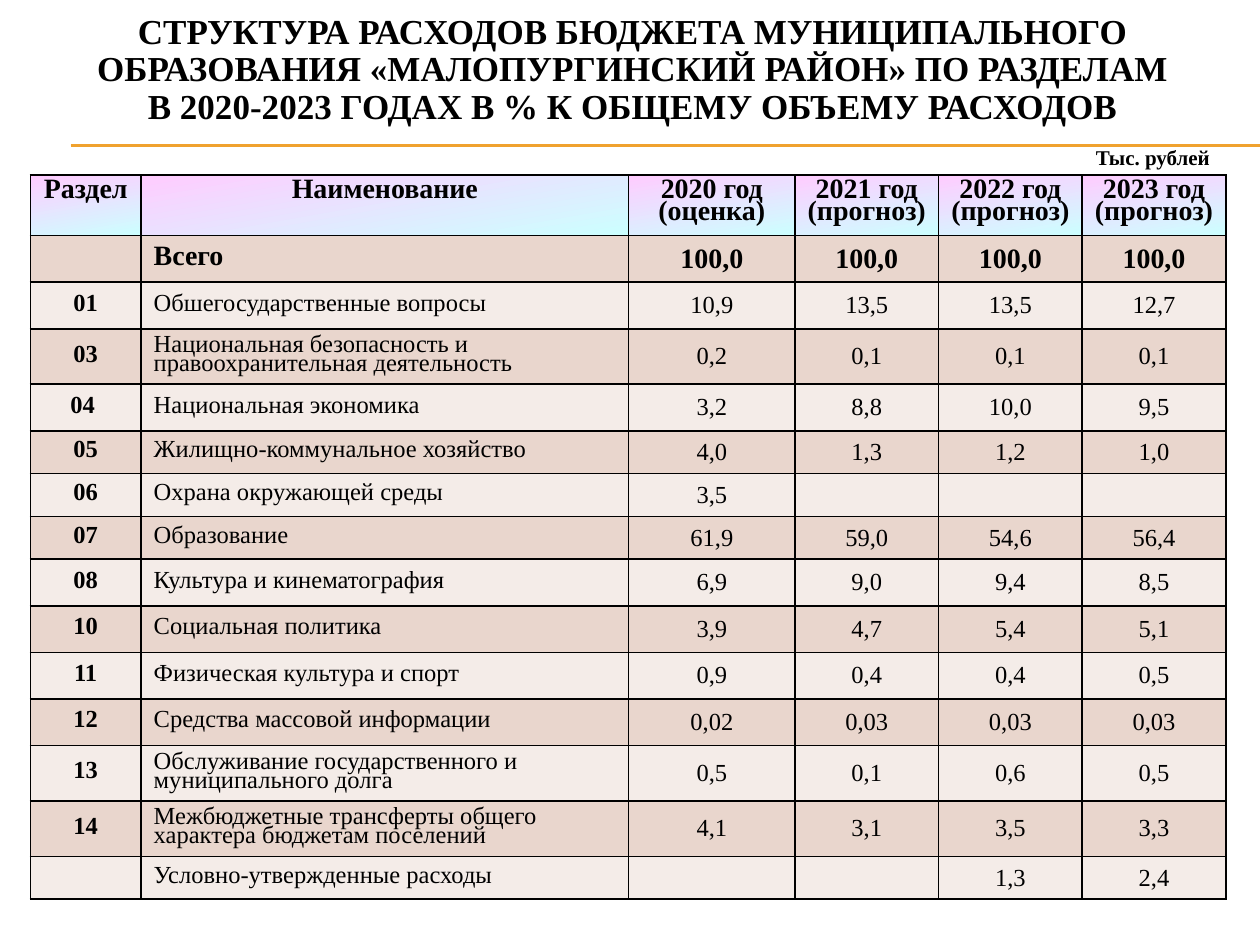
from lxml.etree import SubElement
from pptx import Presentation
from pptx.dml.color import RGBColor
from pptx.enum.shapes import MSO_CONNECTOR
from pptx.enum.text import MSO_ANCHOR, MSO_AUTO_SIZE, PP_ALIGN
from pptx.oxml.ns import qn
from pptx.util import Inches, Pt

BLACK = RGBColor(0x00, 0x00, 0x00)
GOLD = RGBColor(0xF0, 0xA2, 0x2E)
PINK = RGBColor(0xFF, 0xCC, 0xFF)
CYAN = RGBColor(0xCC, 0xFF, 0xFF)
BANDS = [RGBColor(0xE9, 0xD6, 0xCD), RGBColor(0xF4, 0xEC, 0xE8)]
FONT = "Times New Roman"

TITLE = ("СТРУКТУРА РАСХОДОВ БЮДЖЕТА МУНИЦИПАЛЬНОГО ОБРАЗОВАНИЯ "
         "«МАЛОПУРГИНСКИЙ РАЙОН» ПО РАЗДЕЛАМ\v"
         "В 2020-2023 ГОДАХ В % К ОБЩЕМУ ОБЪЕМУ РАСХОДОВ")
COL_WIDTHS = [0.88, 3.87, 1.32, 1.14, 1.14, 1.14]
HEADER_HEIGHT = 0.48
HEADER = ["Раздел", "Наименование", "2020 год\n(оценка)", "2021 год\n(прогноз)",
          "2022 год\n(прогноз)", "2023 год\n(прогноз)"]
# Row height, section, name, one share for each year
ROWS = [
    (0.37, "", "Всего", "100,0", "100,0", "100,0", "100,0"),
    (0.37, "01", "Обшегосударственные вопросы", "10,9", "13,5", "13,5", "12,7"),
    (0.44, "03", "Национальная безопасность и правоохранительная деятельность",
     "0,2", "0,1", "0,1", "0,1"),
    (0.37, "04 ", "Национальная экономика", "3,2", "8,8", "10,0", "9,5"),
    (0.34, "05", "Жилищно-коммунальное хозяйство", "4,0", "1,3", "1,2", "1,0"),
    (0.34, "06", "Охрана окружающей среды", "3,5", "", "", ""),
    (0.34, "07", "Образование", "61,9", "59,0", "54,6", "56,4"),
    (0.37, "08", "Культура и кинематография", "6,9", "9,0", "9,4", "8,5"),
    (0.37, "10", "Социальная политика", "3,9", "4,7", "5,4", "5,1"),
    (0.37, "11", "Физическая культура и спорт", "0,9", "0,4", "0,4", "0,5"),
    (0.37, "12", "Средства массовой информации", "0,02", "0,03", "0,03", "0,03"),
    (0.44, "13", "Обслуживание государственного и муниципального долга",
     "0,5", "0,1", "0,6", "0,5"),
    (0.44, "14", "Межбюджетные трансферты общего характера бюджетам поселений",
     "4,1", "3,1", "3,5", "3,3"),
    (0.34, "", "Условно-утвержденные расходы", "", "", "1,3", "2,4"),
]


def write(tf, text, size, bold=True, align=PP_ALIGN.LEFT, spacing=None):
    tf.text = text
    for p in tf.paragraphs:
        p.alignment, p.line_spacing = align, spacing
        for r in p.runs:
            r.font.color.rgb = BLACK
            for name, value in {"name": FONT, "size": Pt(size), "bold": bold}.items():
                setattr(r.font, name, value)
        if not p.runs:  # an empty cell must not stretch its row
            SubElement(p._p, qn("a:endParaRPr"), sz=str(size * 100))


def add_title(s, left, top, width, height):
    sp = s.shapes.title
    box = {"left": left, "top": top, "width": width, "height": height}
    for name, value in box.items():
        setattr(sp, name, Inches(value))
    tf = sp.text_frame
    write(tf, TITLE, 20, align=PP_ALIGN.CENTER, spacing=0.9)
    tf.auto_size = MSO_AUTO_SIZE.NONE
    tf.vertical_anchor = MSO_ANCHOR.MIDDLE


def add_rule(s, left, right, y):
    line = s.shapes.add_connector(MSO_CONNECTOR.STRAIGHT, Inches(left), Inches(y),
                                  Inches(right), Inches(y))
    line.line.color.rgb = GOLD
    line.line.width = Pt(0.75)
    SubElement(line._element.spPr, qn("a:effectLst"))


def add_unit_note(s, left, top, width, height):
    tf = s.shapes.add_textbox(Inches(left), Inches(top), Inches(width),
                              Inches(height)).text_frame
    write(tf, "Тыс. рублей", 12)
    tf.word_wrap = True
    tf.auto_size = MSO_AUTO_SIZE.SHAPE_TO_FIT_TEXT


def add_borders(cell):
    tcPr = cell._tc.get_or_add_tcPr()
    for side in ("lnL", "lnR", "lnT", "lnB"):
        ln = SubElement(tcPr, qn(f"a:{side}"), w=str(Pt(1)))
        SubElement(SubElement(ln, qn("a:solidFill")), qn("a:srgbClr"), val=str(BLACK))


def fill_header(cell):
    cell.fill.gradient()
    cell.fill.gradient_angle = 280
    for stop, color in zip(cell.fill.gradient_stops, (PINK, CYAN)):
        stop.color.rgb = color


def fill_body(cell, color):
    cell.fill.solid()
    cell.fill.fore_color.rgb = color
    cell.vertical_anchor = MSO_ANCHOR.MIDDLE


def add_budget_table(s, left, top, width, height):
    table = s.shapes.add_table(len(ROWS) + 1, len(COL_WIDTHS), Inches(left), Inches(top),
                               Inches(width), Inches(height)).table
    table.first_row = table.horz_banding = False
    for col, col_width in zip(table.columns, COL_WIDTHS):
        col.width = Inches(col_width)
    for i, (row_height, *texts) in enumerate([(HEADER_HEIGHT, *HEADER), *ROWS]):
        table.rows[i].height = Inches(row_height)
        for j, text in enumerate(texts):
            cell = table.cell(i, j)
            add_borders(cell)
            if i == 0:
                fill_header(cell)
            else:
                fill_body(cell, BANDS[(i - 1) % 2])
            # Header and total row are larger; the section column is bold throughout
            write(cell.text_frame, text, 16 if i < 2 and text else 14,
                  bold=i < 2 or j == 0,
                  align=PP_ALIGN.LEFT if i and j == 1 else PP_ALIGN.CENTER,
                  spacing=0.7 if i == 0 or j < 2 else None)


def main():
    prs = Presentation()
    prs.slide_width, prs.slide_height = Inches(10), Inches(7.5)
    s = prs.slides.add_slide(prs.slide_layouts[5])
    # Double rule under the title
    for y in (1.15, 1.16):
        add_rule(s, 0.56, 10, y)
    add_title(s, 0.27, 0.02, 9.5, 1.08)
    add_budget_table(s, 0.24, 1.39, 9.5, 5.77)
    add_unit_note(s, 8.6, 1.1, 1.17, 0.3)
    prs.save("out.pptx")


if __name__ == "__main__":
    main()
